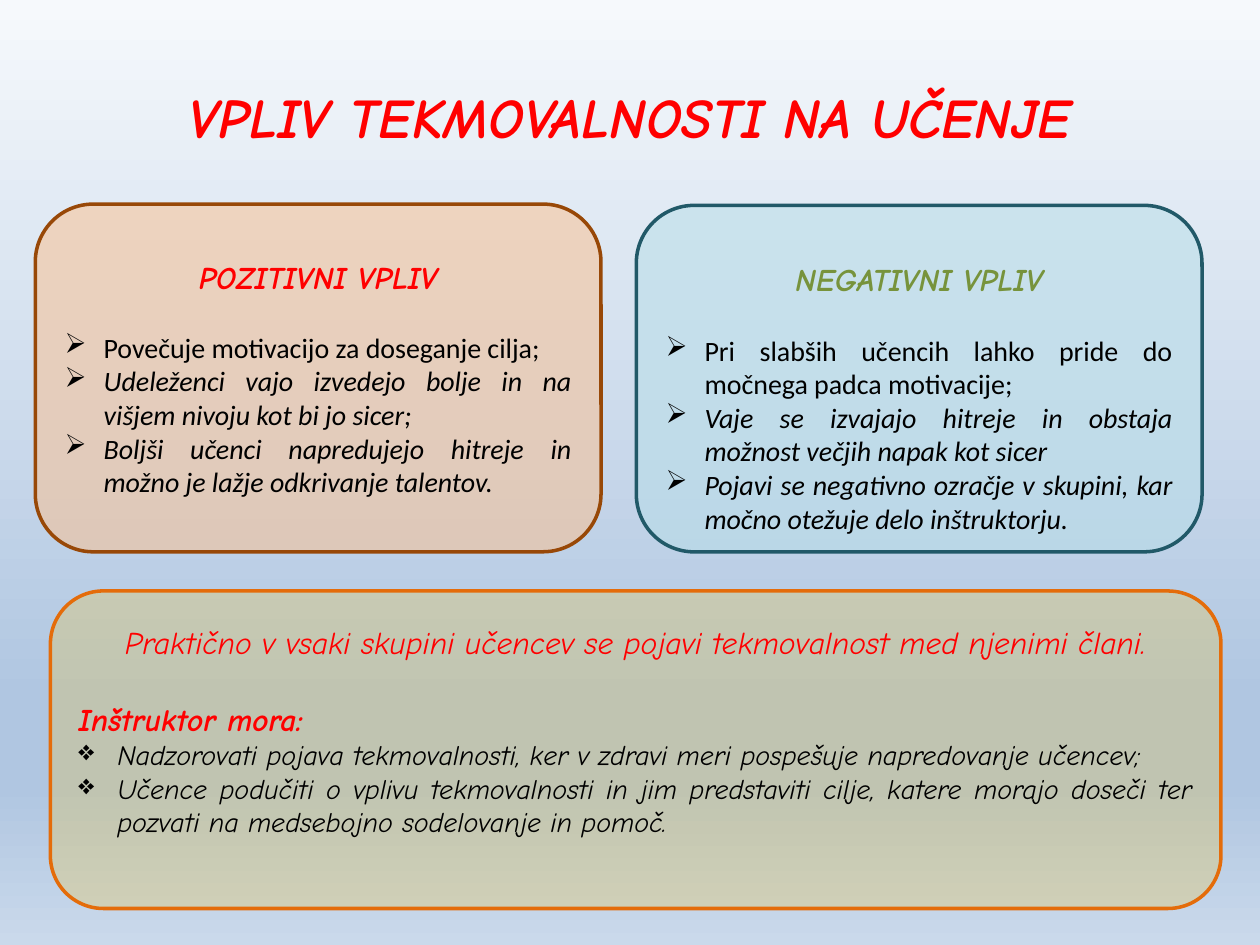
import pptx
import pptx.util
import pptx.dml.color
import pptx.enum.shapes
import pptx.enum.text
import pptx.oxml.ns
from lxml import etree

Inches, Pt = pptx.util.Inches, pptx.util.Pt
RGBColor = pptx.dml.color.RGBColor
Align = pptx.enum.text.PP_ALIGN
qn = pptx.oxml.ns.qn

RED = RGBColor(0xFF, 0x00, 0x00)
BLACK = RGBColor(0x00, 0x00, 0x00)
GREEN = RGBColor(0x77, 0x93, 0x3C)
PEACH = RGBColor(0xFA, 0xC0, 0x90)
BROWN = RGBColor(0x98, 0x48, 0x07)
AQUA = RGBColor(0xB7, 0xDE, 0xE8)
TEAL = RGBColor(0x21, 0x59, 0x68)
GOLD = RGBColor(0xFF, 0xC0, 0x00)
ORANGE = RGBColor(0xE4, 0x6C, 0x0A)
SKY = [(0, RGBColor(0xF6, 0xF9, 0xFC)), (74, RGBColor(0xB0, 0xC6, 0xE1)),
       (83, RGBColor(0xB0, 0xC6, 0xE1)), (100, RGBColor(0xCA, 0xD9, 0xEB))]

COMIC = {"name": "Comic Neue", "size": Pt(18), "italic": True, "bold": False}
HEAD = {**COMIC, "bold": True}
BODY = {"name": "Calibri", "size": Pt(16), "bold": False, "italic": False}


class Deck:
    def __init__(self):
        self.prs = pptx.Presentation()
        self.prs.slide_width, self.prs.slide_height = Inches(10), Inches(7.5)
        self.slide = self.prs.slides.add_slide(self.prs.slide_layouts[6])

    def sky(self, stops):
        """Fill the background with a top-to-bottom gradient."""
        fill = self.slide.background.fill
        fill.gradient()
        fill.gradient_angle = 270
        group = self.slide.element.find(".//" + qn("a:gsLst"))
        for old in list(group):
            group.remove(old)
        for place, color in stops:
            stop = etree.SubElement(group, qn("a:gs"), pos=str(place * 1000))
            etree.SubElement(stop, qn("a:srgbClr"), val=str(color))

    def title(self, text, at):
        box = self.slide.shapes.add_textbox(*map(Inches, at))
        style = {**HEAD, "size": Pt(32)}
        self.set_text(box.text_frame, [self.para(text, style, RED, Align.CENTER)])

    def panel(self, at, fill, alpha, line, paras, top=0.05, bottom=0.05):
        kind = pptx.enum.shapes.MSO_SHAPE.ROUNDED_RECTANGLE
        box = self.slide.shapes.add_shape(kind, *map(Inches, at))
        box.shadow.inherit = False
        box.fill.solid()
        box.fill.fore_color.rgb = fill
        tint = box.element.spPr.find(qn("a:solidFill")).find(qn("a:srgbClr"))
        etree.SubElement(tint, qn("a:alpha"), val=str(alpha * 1000))
        box.line.color.rgb = line
        box.line.width = Pt(2)
        frame = box.text_frame
        frame.margin_top, frame.margin_bottom = Inches(top), Inches(bottom)
        self.set_text(frame, paras)

    def para(self, text, style, color, align=Align.JUSTIFY, after=0, mark=None):
        return text, style, color, align, after, mark

    def set_text(self, frame, paras):
        frame.word_wrap = True
        frame.vertical_anchor = pptx.enum.text.MSO_ANCHOR.MIDDLE
        for i, (text, style, color, align, after, mark) in enumerate(paras):
            par = frame.add_paragraph() if i else frame.paragraphs[0]
            par.alignment = align
            if after:
                par.space_after = Pt(after)
            if mark:
                props = par._p.get_or_add_pPr()
                props.set("marL", str(Inches(0.31)))
                props.set("indent", str(-Inches(0.31)))
                etree.SubElement(props, qn("a:buChar"), char=mark)
            run = par.add_run()
            run.text = text
            for key, value in style.items():
                setattr(run.font, key, value)
            run.font.color.rgb = color

    def impact(self, at, fill, line, head, color, items, **inset):
        """Panel with a heading and arrow points, the first one upright."""
        paras = [self.para(head, HEAD, color, Align.CENTER, 20)]
        for i, text in enumerate(items):
            style = {**BODY, "italic": i > 0}
            paras.append(self.para(text, style, BLACK, mark="➢"))
        self.panel(at, fill, 52, line, paras, **inset)


def main():
    deck = Deck()
    deck.sky(SKY)
    deck.title("VPLIV TEKMOVALNOSTI NA UČENJE", (0.5, 0.3, 9, 1.25))
    deck.impact((0.28, 1.62, 4.49, 2.76), PEACH, BROWN, "POZITIVNI VPLIV", RED, [
        "Povečuje motivacijo za doseganje cilja;",
        "Udeleženci vajo izvedejo bolje in na višjem nivoju kot bi jo sicer;",
        "Boljši učenci napredujejo hitreje in možno je lažje odkrivanje talentov.",
    ])
    deck.impact((5.05, 1.63, 4.49, 2.75), AQUA, TEAL, "NEGATIVNI VPLIV", GREEN, [
        "Pri slabših učencih lahko pride do močnega padca motivacije;",
        "Vaje se izvajajo hitreje in obstaja možnost večjih napak kot sicer",
        "Pojavi se negativno ozračje v skupini, kar močno otežuje delo inštruktorju.",
    ], top=0.3, bottom=0)

    small = {**COMIC, "size": Pt(16)}
    tasks = [
        "Nadzorovati pojava tekmovalnosti, ker v zdravi meri pospešuje "
        "napredovanje učencev;",
        "Učence podučiti o vplivu tekmovalnosti in jim predstaviti cilje, "
        "katere morajo doseči ter pozvati na medsebojno sodelovanje in pomoč.",
    ]
    paras = [
        deck.para("Praktično v vsaki skupini učencev se pojavi tekmovalnost "
                  "med njenimi člani.", COMIC, RED, Align.CENTER, 22),
        deck.para("Inštruktor mora:", HEAD, RED),
    ]
    paras += [deck.para(text, small, BLACK, mark="❖") for text in tasks]
    deck.panel((0.4, 4.69, 9.29, 2.52), GOLD, 21, ORANGE, paras, bottom=0.35)
    deck.prs.save("out.pptx")


if __name__ == "__main__":
    main()
